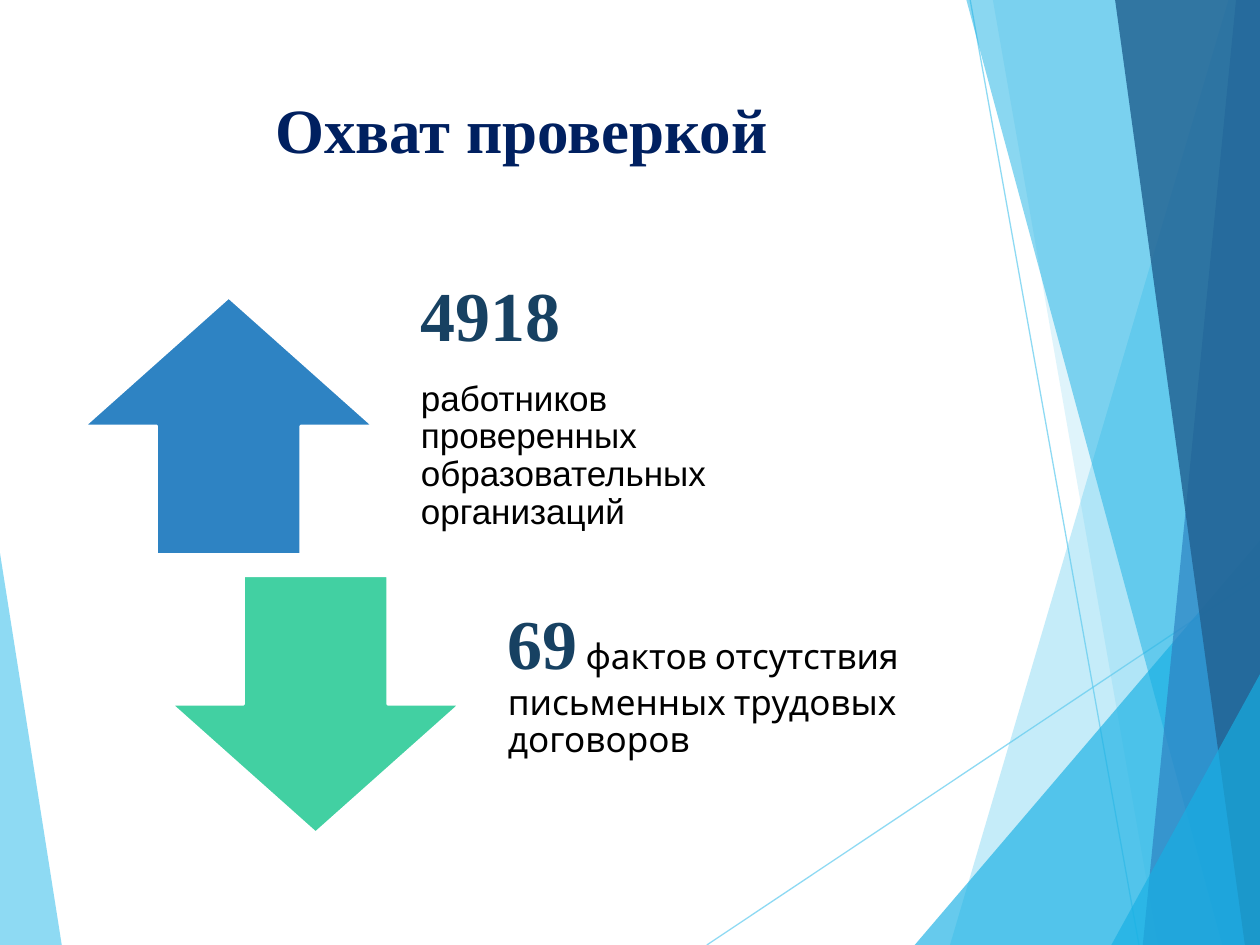
from lxml.etree import SubElement
from pptx import Presentation
from pptx.dml.color import RGBColor
from pptx.enum.shapes import MSO_CONNECTOR, MSO_SHAPE
from pptx.enum.text import MSO_ANCHOR, PP_ALIGN
from pptx.oxml.ns import qn
from pptx.util import Inches, Pt

WIDTH, HEIGHT = 10, 7.5
SKY = RGBColor(0x5F, 0xCB, 0xEF)
CYAN = RGBColor(0x17, 0xB0, 0xE4)
BLUE = RGBColor(0x2E, 0x83, 0xC3)
DEEP_BLUE = RGBColor(0x22, 0x62, 0x92)
GREEN = RGBColor(0x42, 0xD0, 0xA2)
NAVY = RGBColor(0x00, 0x20, 0x60)
NUMBER_BLUE = RGBColor(0x17, 0x41, 0x62)
BLACK = RGBColor(0, 0, 0)
WHITE = RGBColor(0xFF, 0xFF, 0xFF)

SERIF = "Times New Roman"
ARROW_W, ROW_H = 2.29, 2.04
TEXT_W, TEXT_GAP = 3.89, 0.07
ROW_LEFT, ROW_TOP = 0.67, 2.36
ROW_SHIFT, ROW_STEP = 0.69, 2.21

# Corner points, colour and opacity in percent, from back to front
FACETS = [
    ([(0, 4.39), (0.49, HEIGHT), (0, HEIGHT)], SKY, 70),
    ([(9.75, 0), (7.54, HEIGHT), (WIDTH, HEIGHT), (WIDTH, 0)], SKY, 36),
    ([(7.88, 0), (9.19, HEIGHT), (WIDTH, HEIGHT), (WIDTH, 0)], SKY, 20),
    ([(7.26, HEIGHT), (WIDTH, 4.29), (WIDTH, HEIGHT)], CYAN, 66),
    ([(7.67, 0), (9.7, HEIGHT), (WIDTH, HEIGHT), (WIDTH, 0)], CYAN, 50),
    ([(9.81, 0), (9.07, HEIGHT), (WIDTH, HEIGHT), (WIDTH, 0)], BLUE, 70),
    ([(8.85, 0), (9.88, HEIGHT), (WIDTH, HEIGHT), (WIDTH, 0)], DEEP_BLUE, 82),
    ([(8.82, HEIGHT), (WIDTH, 5.35), (WIDTH, HEIGHT)], CYAN, 66),
]
RAYS = [((5.61, HEIGHT), (WIDTH, 4.57)), ((7.7, 0), (9.04, HEIGHT))]

# Arrow, its colour, paragraphs made of (text, size, font, colour, bold)
ROWS = [
    (MSO_SHAPE.UP_ARROW, BLUE, [
        [("4918", 40, SERIF, NUMBER_BLUE, True)],
        [("работников проверенных образовательных организаций",
          20, "Arial", BLACK, False)],
    ]),
    (MSO_SHAPE.DOWN_ARROW, GREEN, [
        [("69", 40, SERIF, NUMBER_BLUE, True),
         (" фактов отсутствия письменных трудовых договоров",
          20, "Cabin", BLACK, False)],
    ]),
]


def set_opacity(sp, percent):
    """Add an alpha value to the colour of a solid fill or line."""
    color = next(sp._element.spPr.iter(qn("a:srgbClr")))
    SubElement(color, qn("a:alpha"), val=str(percent * 1000))


def add_facet(slide, points, color, opacity):
    corners = [(Inches(x), Inches(y)) for x, y in points]
    builder = slide.shapes.build_freeform(*corners[0])
    builder.add_line_segments(corners[1:])
    sp = builder.convert_to_shape()
    sp.shadow.inherit = False
    sp.fill.solid()
    sp.fill.fore_color.rgb = color
    sp.line.fill.background()
    set_opacity(sp, opacity)


def add_ray(slide, start, end):
    ends = [Inches(v) for v in (*start, *end)]
    ray = slide.shapes.add_connector(MSO_CONNECTOR.STRAIGHT, *ends)
    ray.line.color.rgb = SKY
    ray.line.width = Pt(0.75)
    set_opacity(ray, 70)
    SubElement(ray._element.spPr, qn("a:effectLst"))


def add_arrow(slide, kind, x, y, color):
    sp = slide.shapes.add_shape(
        kind, Inches(x), Inches(y), Inches(ARROW_W), Inches(ROW_H))
    sp.shadow.inherit = False
    sp.fill.solid()
    sp.fill.fore_color.rgb = color
    sp.line.color.rgb = WHITE
    sp.line.width = Pt(1.5)


def style_font(font, size, name, color, bold):
    font.size, font.name, font.bold = Pt(size), name, bold
    font.color.rgb = color


def add_text_frame(slide, x, y, w, h):
    box = slide.shapes.add_textbox(Inches(x), Inches(y), Inches(w), Inches(h))
    box.text_frame.word_wrap = True
    return box.text_frame


def add_title(slide, text):
    p = add_text_frame(slide, 0.67, 0.67, 6.94, 1.44).paragraphs[0]
    p.text = text
    p.alignment = PP_ALIGN.CENTER
    style_font(p.font, 36, SERIF, NAVY, True)


def add_statement(slide, x, y, paragraphs):
    tf = add_text_frame(slide, x, y, TEXT_W, ROW_H)
    tf.vertical_anchor = MSO_ANCHOR.MIDDLE
    tf.margin_left = tf.margin_right = tf.margin_bottom = Inches(0.31)
    tf.margin_top = 0
    for i, runs in enumerate(paragraphs):
        p = tf.add_paragraph() if i else tf.paragraphs[0]
        p.line_spacing = 0.9
        p.space_after = Pt(14)
        for text, *style in runs:
            r = p.add_run()
            r.text = text
            style_font(r.font, *style)


def main():
    prs = Presentation()
    prs.slide_width, prs.slide_height = Inches(WIDTH), Inches(HEIGHT)
    slide = prs.slides.add_slide(prs.slide_layouts[6])

    left_facet, *right_facets = FACETS
    add_facet(slide, *left_facet)
    for ray in RAYS:
        add_ray(slide, *ray)
    for facet in right_facets:
        add_facet(slide, *facet)

    add_title(slide, "Охват проверкой")
    for i, (kind, color, paragraphs) in enumerate(ROWS):
        x, y = ROW_LEFT + i * ROW_SHIFT, ROW_TOP + i * ROW_STEP
        add_arrow(slide, kind, x, y, color)
        add_statement(slide, x + ARROW_W + TEXT_GAP, y, paragraphs)

    prs.save("out.pptx")


if __name__ == "__main__":
    main()
